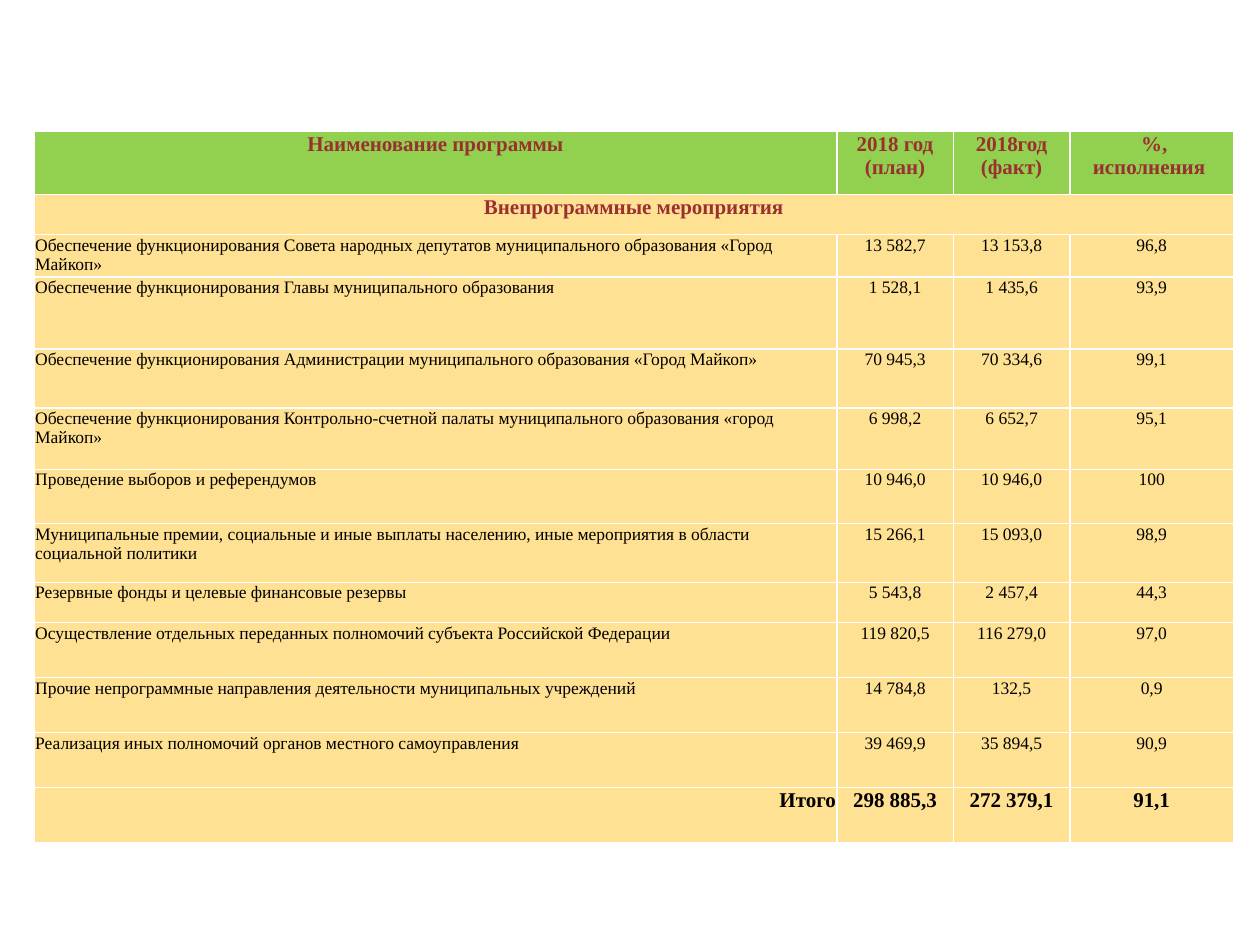
from copy import deepcopy
from dataclasses import dataclass

from lxml import etree
from pptx import Presentation
from pptx.dml.color import RGBColor
from pptx.enum.text import PP_ALIGN
from pptx.oxml.ns import qn
from pptx.util import Cm, Pt

LEFT, CENTER, RIGHT = PP_ALIGN.LEFT, PP_ALIGN.CENTER, PP_ALIGN.RIGHT


@dataclass(frozen=True)
class Theme:
    font: str = "Times New Roman"
    heading: str = "9A3130"
    body: str = "000000"
    header_fill: str = "92D050"
    row_fill: str = "FFE193"
    border: str = "FFFFFF"
    border_width: int = Pt(1)
    large: int = 12
    small: int = 10


THEME = Theme()

HEADER = ["Наименование программы", "2018 год\n(план)", "2018год\n(факт)", " %,\nисполнения "]
SECTION = "Внепрограммные мероприятия"
PROGRAMS = [
    ["Обеспечение функционирования Совета народных депутатов муниципального образования «Город Майкоп»",
     "13 582,7", "13 153,8", "96,8"],
    ["Обеспечение функционирования Главы муниципального образования",
     "1 528,1", "1 435,6", "93,9"],
    ["Обеспечение функционирования Администрации муниципального образования «Город Майкоп»",
     "70 945,3", "70 334,6", "99,1"],
    ["Обеспечение функционирования Контрольно-счетной палаты муниципального образования «город Майкоп»",
     "6 998,2", "6 652,7", "95,1"],
    ["Проведение выборов и референдумов", "10 946,0", "10 946,0", "100"],
    ["Муниципальные премии, социальные и иные выплаты населению, "
     "иные мероприятия в области социальной политики",
     "15 266,1", "15 093,0", "98,9"],
    ["Резервные фонды и целевые финансовые резервы", "5 543,8", "2 457,4", "44,3"],
    ["Осуществление отдельных переданных полномочий субъекта Российской Федерации",
     "119 820,5", "116 279,0", "97,0"],
    ["Прочие непрограммные направления деятельности муниципальных учреждений",
     "14 784,8", "132,5", "0,9"],
    ["Реализация иных полномочий органов местного самоуправления",
     "39 469,9", "35 894,5", "90,9"],
]
TOTAL = ["Итого", "298 885,3", "272 379,1", "91,1"]

COLUMN_WIDTHS = [16.18, 2.35, 2.35, 3.3]
ROW_HEIGHTS = [1.27, 0.81, 0.86, 1.45, 1.19, 1.24, 1.09, 1.19, 0.81] + [1.11] * 4


def set_borders(cell):
    properties = cell._tc.get_or_add_tcPr()
    for side in ("a:lnL", "a:lnR", "a:lnT", "a:lnB"):
        line = etree.SubElement(properties, qn(side), w=str(THEME.border_width))
        fill = etree.SubElement(line, qn("a:solidFill"))
        etree.SubElement(fill, qn("a:srgbClr"), val=THEME.border)


def fill_cell(cell, text, fill, color, size, bold, alignment):
    set_borders(cell)
    cell.fill.solid()
    cell.fill.fore_color.rgb = RGBColor.from_string(fill)
    cell.margin_left = cell.margin_right = cell.margin_top = Cm(0.02)
    cell.margin_bottom = 0

    paragraph = cell.text_frame.paragraphs[0]
    paragraph.text = text
    paragraph.alignment = alignment
    for run in paragraph.runs:
        run.font.name = THEME.font
        run.font.size = Pt(size)
        run.font.bold = bold
        run.font.color.rgb = RGBColor.from_string(color)
    # Line breaks take the same character format as the text
    for line_break in paragraph._p.findall(qn("a:br")):
        line_break.append(deepcopy(paragraph.runs[0]._r.rPr))


def fill_row(table, row, texts, fill, color, size, bold, first_alignment):
    for column, text in enumerate(texts):
        alignment = CENTER if column else first_alignment
        fill_cell(table.cell(row, column), text, fill, color, size, bold, alignment)


def add_budget_table(slide, left, top, width, height):
    shape = slide.shapes.add_table(len(ROW_HEIGHTS), len(COLUMN_WIDTHS), left, top, width, height)
    table = shape.table
    for column, share in zip(table.columns, COLUMN_WIDTHS):
        column.width = int(width * share / sum(COLUMN_WIDTHS))
    for row, share in zip(table.rows, ROW_HEIGHTS):
        row.height = int(height * share / sum(ROW_HEIGHTS))

    # Header and section title
    fill_row(table, 0, HEADER, THEME.header_fill, THEME.heading, THEME.large, True, CENTER)
    section_texts = [SECTION] + [""] * (len(COLUMN_WIDTHS) - 1)
    fill_row(table, 1, section_texts, THEME.row_fill, THEME.heading, THEME.large, True, CENTER)
    table.cell(1, 0).merge(table.cell(1, len(COLUMN_WIDTHS) - 1))

    # Programs and total
    for row, texts in enumerate(PROGRAMS, start=2):
        fill_row(table, row, texts, THEME.row_fill, THEME.body, THEME.small, False, LEFT)
    fill_row(table, len(ROW_HEIGHTS) - 1, TOTAL, THEME.row_fill, THEME.body, THEME.large, True, RIGHT)


def main():
    presentation = Presentation()
    presentation.slide_width, presentation.slide_height = Cm(25.4), Cm(19.05)
    slide = presentation.slides.add_slide(presentation.slide_layouts[6])
    add_budget_table(slide, Cm(0.69), Cm(2.65), Cm(sum(COLUMN_WIDTHS)), Cm(sum(ROW_HEIGHTS)))
    presentation.save("out.pptx")


if __name__ == "__main__":
    main()
